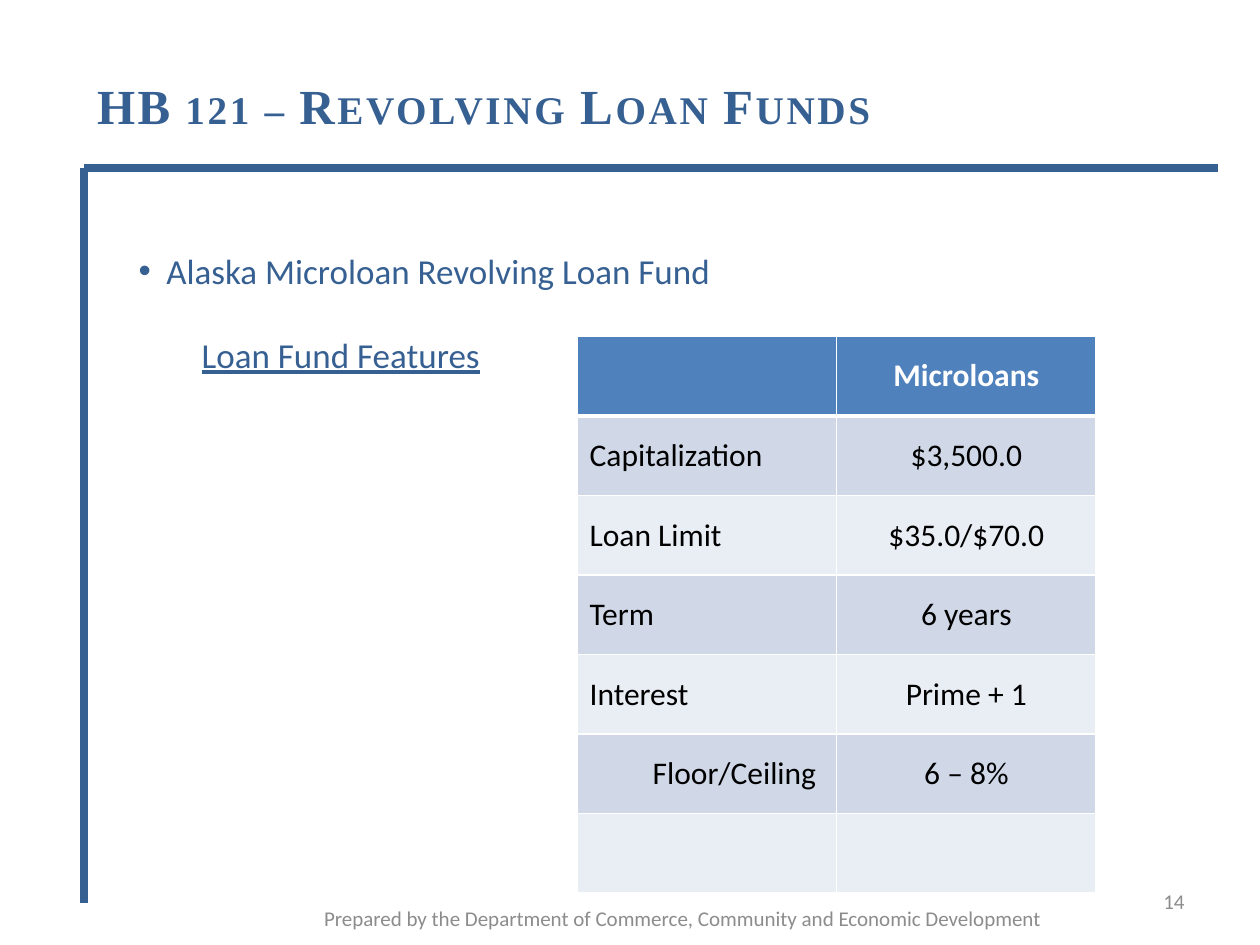
from lxml import etree
from pptx import Presentation
from pptx.dml.color import RGBColor
from pptx.enum import shapes, text
from pptx.oxml import ns
from pptx.util import Inches, Pt

NAVY = RGBColor(0x37, 0x60, 0x92)
BLUE = RGBColor(0x4F, 0x81, 0xBD)
BAND_DARK = RGBColor(0xD0, 0xD8, 0xE8)
BAND_LIGHT = RGBColor(0xE9, 0xED, 0xF4)
WHITE = RGBColor(0xFF, 0xFF, 0xFF)
BLACK = RGBColor(0, 0, 0)
GRAY = RGBColor(0x8C, 0x8C, 0x8C)
LEFT, CENTER, RIGHT = text.PP_ALIGN.LEFT, text.PP_ALIGN.CENTER, text.PP_ALIGN.RIGHT

# Content
TITLE = "HB 121 – Revolving Loan Funds"
FUND = "Alaska Microloan Revolving Loan Fund"
FEATURES = "Loan Fund Features"
LOAN_ROWS = [
    ("", "Microloans"),
    ("Capitalization", "$3,500.0"),
    ("Loan Limit", "$35.0/$70.0"),
    ("Term", "6 years"),
    ("Interest", "Prime + 1"),
    ("Floor/Ceiling", "6 – 8%"),
    ("", ""),
]
INDENTED_LABEL = "Floor/Ceiling"
RULES = [(0.67, 1.33, 0.67, 7.17), (0.67, 1.33, 9.67, 1.33)]
FOOTERS = [
    ("14", RIGHT, (7.17, 6.95, 2.33, 0.4)),
    ("Prepared by the Department of Commerce, Community and Economic Development",
     CENTER, (1.92, 7.08, 7, 0.42)),
]


def place(shape, *bounds):
    shape.left, shape.top, shape.width, shape.height = map(Inches, bounds)


def style(para, size, color, align=LEFT, name="Calibri", bold=False):
    para.alignment = align
    font = para.font
    font.name, font.size, font.bold = name, Pt(size), bold
    font.color.rgb = color


def indent(para, margin, first=0.0, bullet=None):
    props = para._p.get_or_add_pPr()
    props.set("marL", str(Inches(margin)))
    props.set("indent", str(Inches(first)))
    if bullet:
        mark = etree.Element(ns.qn("a:buChar"), char=bullet)
    else:
        mark = etree.Element(ns.qn("a:buNone"))
    props.insert_element_before(mark, "a:tabLst", "a:defRPr", "a:extLst")


def border(cell, bottom):
    props = cell._tc.get_or_add_tcPr()
    widths = [("lnL", 1), ("lnR", 1), ("lnT", 1), ("lnB", bottom)]
    for position, (side, width) in enumerate(widths):
        line = etree.Element(ns.qn(f"a:{side}"), w=str(Pt(width)))
        fill = etree.SubElement(line, ns.qn("a:solidFill"))
        etree.SubElement(fill, ns.qn("a:srgbClr"), val=str(WHITE))
        props.insert(position, line)


deck = Presentation()
deck.slide_width, deck.slide_height = Inches(10), Inches(7.5)
page = deck.slides.add_slide(deck.slide_layouts[1])

# Title in spaced small capitals
title = page.shapes.title
place(title, 0.67, 0.17, 8.92, 1.42)
title.text_frame.vertical_anchor = text.MSO_ANCHOR.MIDDLE
para = title.text_frame.paragraphs[0]
span = para.add_run()
span.text = TITLE
style(para, 28, NAVY, name="Times New Roman", bold=True)
para.line_spacing = Pt(27)
span_props = span._r.get_or_add_rPr()
span_props.set("cap", "small")
span_props.set("spc", "150")

# Rules beside and above the content
for x1, y1, x2, y2 in RULES:
    rule = page.shapes.add_connector(
        shapes.MSO_CONNECTOR.STRAIGHT, *map(Inches, (x1, y1, x2, y2)))
    rule.line.color.rgb = NAVY
    rule.line.width = Pt(4.5)
    etree.SubElement(rule._element.spPr, ns.qn("a:effectLst"))

# Fund name and features heading
body = page.placeholders[1]
place(body, 1, 1.93, 7.33, 2.78)
frame = body.text_frame
frame.text = f"{FUND}\n{FEATURES}"
fund, features = frame.paragraphs
for para in (fund, features):
    style(para, 20, NAVY)
fund.space_before = Pt(0)
features.space_before = Pt(24)
features.font.underline = True
indent(fund, 0.22, -0.22, "•")
indent(features, 0.5)

# Loan terms table
table = page.shapes.add_table(
    len(LOAN_ROWS), 2, Inches(4.58), Inches(2.67), Inches(4.12), Inches(4.42)).table
for r, values in enumerate(LOAN_ROWS):
    header = r == 0
    fill = BLUE if header else (BAND_LIGHT, BAND_DARK)[r % 2]
    for c, value in enumerate(values):
        cell = table.cell(r, c)
        cell.text = value
        cell.vertical_anchor = text.MSO_ANCHOR.MIDDLE
        cell.fill.solid()
        cell.fill.fore_color.rgb = fill
        border(cell, 3 if header else 1)
        para = cell.text_frame.paragraphs[0]
        style(para, 18, WHITE if header else BLACK, (LEFT, CENTER)[c], bold=header)
        if value == INDENTED_LABEL:
            indent(para, 0.5)

# Page number and footer
for words, align, bounds in FOOTERS:
    box = page.shapes.add_textbox(*map(Inches, bounds))
    box.text_frame.word_wrap = True
    box.text_frame.vertical_anchor = text.MSO_ANCHOR.MIDDLE
    box.text_frame.text = words
    style(box.text_frame.paragraphs[0], 12, GRAY, align)

deck.save("out.pptx")
